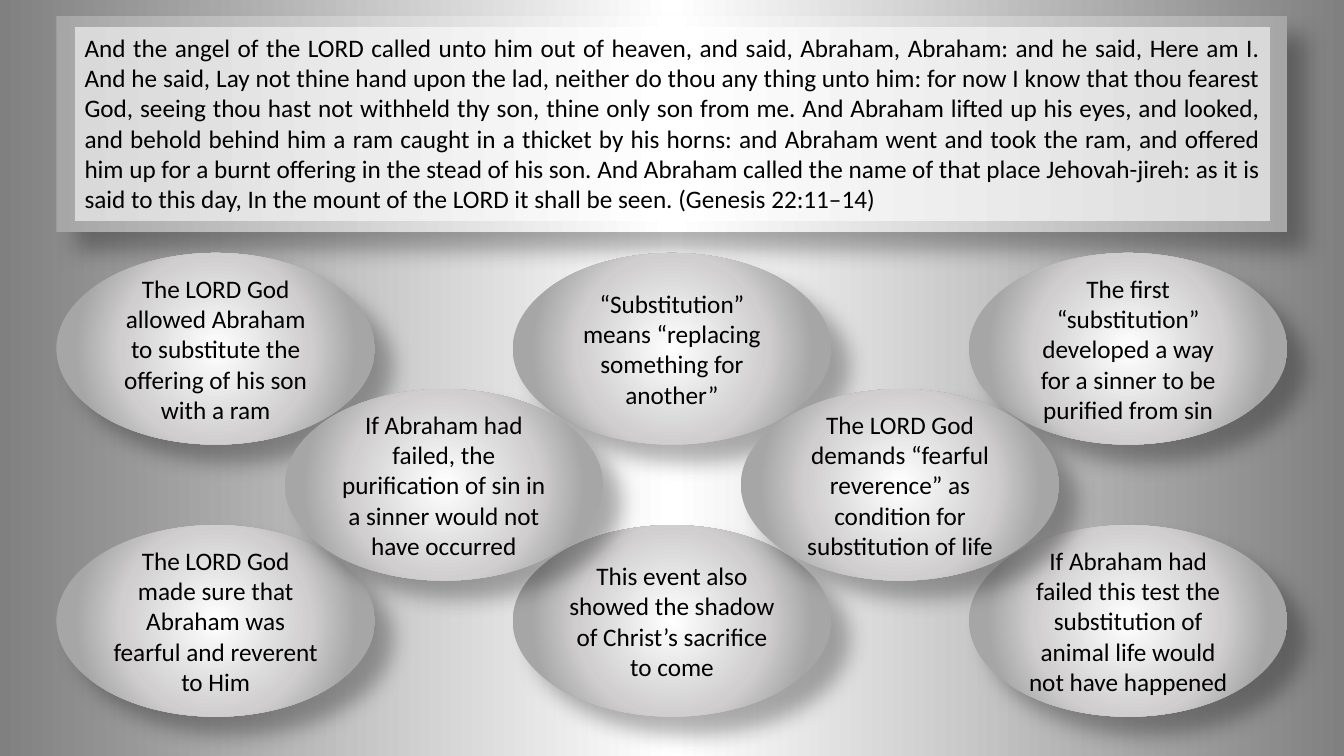
from lxml import etree
from pptx import Presentation
from pptx.dml.color import RGBColor
from pptx.enum.shapes import MSO_SHAPE
from pptx.enum.text import MSO_ANCHOR, MSO_AUTO_SIZE, PP_ALIGN
from pptx.oxml.ns import qn
from pptx.util import Inches, Pt

RECTANGLE, OVAL = MSO_SHAPE.RECTANGLE, MSO_SHAPE.OVAL
TOP, MIDDLE = MSO_ANCHOR.TOP, MSO_ANCHOR.MIDDLE
CENTER, JUSTIFY = PP_ALIGN.CENTER, PP_ALIGN.JUSTIFY
GROW = MSO_AUTO_SIZE.SHAPE_TO_FIT_TEXT

BACKDROP = [(0, "808080"), (50, "FFFFFF"), (100, "808080")]
FRAME = [(0, "A6A6A6"), (50, "FFFFFF"), (100, "A6A6A6")]
PANEL = [(0, "D9D9D9"), (50, "FFFFFF"), (100, "D9D9D9")]
BUBBLE = [(0, "FFFFFF"), (51, "D0CECE"), (76, "A6A6A6")]

VERSE = (
    "And the angel of the LORD called unto him out of heaven, and said, Abraham, "
    "Abraham: and he said, Here am I. And he said, Lay not thine hand upon the lad, "
    "neither do thou any thing unto him: for now I know that thou fearest God, seeing "
    "thou hast not withheld thy son, thine only son from me. And Abraham lifted up his "
    "eyes, and looked, and behold behind him a ram caught in a thicket by his horns: "
    "and Abraham went and took the ram, and offered him up for a burnt offering in the "
    "stead of his son. And Abraham called the name of that place Jehovah-jireh: as it "
    "is said to this day, In the mount of the LORD it shall be seen. (Genesis 22:11–14)"
)

# Column, row and wording of each bubble, from back to front
POINTS = [
    (0, 0, "The LORD God allowed Abraham to substitute the offering of his son with a ram"),
    (2, 0, "“Substitution” means “replacing something for another”"),
    (4, 0, "The first “substitution” developed a way for a sinner to be purified from sin"),
    (0, 2, "The LORD God made sure that Abraham was fearful and reverent to Him"),
    (2, 2, "This event also showed the shadow of Christ’s sacrifice to come"),
    (4, 2, "If Abraham had failed this test the substitution of animal life would not have happened"),
    (3, 1, "The LORD God demands “fearful reverence” as condition for substitution of life"),
    (1, 1, "If Abraham had failed, the purification of sin in a sinner would not have occurred"),
]
LEFT, COLUMN_STEP = 0.56, 9.05 / 4
UPPER, ROW_STEP = 2.51, 1.35


def color(value):
    return RGBColor.from_string(value)


def add_node(parent, tag, **attributes):
    node = etree.SubElement(parent, qn(tag))
    for name, value in attributes.items():
        node.set(name, str(value))
    return node


class Page:
    font, size, ink = "Calibri", 18, "000000"

    def __init__(self, slide):
        self.slide = slide

    def gradient(self, owner, fill, stops, radial=False):
        fill.gradient()
        node = owner.element.find(".//" + qn("a:gradFill"))
        for child in list(node):
            node.remove(child)
        stop_list = add_node(node, "a:gsLst")
        for position, value in stops:
            stop = add_node(stop_list, "a:gs", pos=position * 1000)
            add_node(stop, "a:srgbClr", val=value)
        if radial:
            shade = add_node(node, "a:path", path="circle")
            add_node(shade, "a:fillToRect", l=50000, t=50000, r=50000, b=50000)
        else:
            add_node(node, "a:lin", ang=0, scaled=0)

    def background(self, stops):
        self.gradient(self.slide, self.slide.background.fill, stops)

    def shape(self, kind, left, top, width, height, stops, shadow=True):
        box = self.slide.shapes.add_shape(
            kind, Inches(left), Inches(top), Inches(width), Inches(height))
        self.gradient(box, box.fill, stops, radial=kind == OVAL)
        box.line.fill.background()
        box.shadow.inherit = False
        if shadow:
            effects = box.element.spPr.find(qn("a:effectLst"))
            outer = add_node(effects, "a:outerShdw", blurRad=Pt(15), dist=Pt(18),
                             dir=45 * 60000, algn="tl", rotWithShape=0)
            tint = add_node(outer, "a:srgbClr", val="000000")
            add_node(tint, "a:alpha", val=30000)
        return box

    def text(self, box, wording, align, anchor):
        frame = box.text_frame
        frame.word_wrap = True
        frame.vertical_anchor = anchor
        para = frame.paragraphs[0]
        para.alignment = align
        span = para.add_run()
        span.text = wording
        span.font.name = self.font
        span.font.size = Pt(self.size)
        span.font.color.rgb = color(self.ink)


def main():
    deck = Presentation()
    deck.slide_width, deck.slide_height = Inches(13.33), Inches(7.5)
    page = Page(deck.slides.add_slide(deck.slide_layouts[6]))
    page.background(BACKDROP)

    # Framed verse
    page.shape(RECTANGLE, LEFT, 0.16, 12.21, 2.14, FRAME)
    panel = page.shape(RECTANGLE, 0.74, 0.27, 11.86, 1.92, PANEL, shadow=False)
    page.text(panel, VERSE, JUSTIFY, TOP)
    panel.text_frame.auto_size = GROW

    # Bubbles on a staggered grid
    for column, row, wording in POINTS:
        bubble = page.shape(OVAL, LEFT + column * COLUMN_STEP, UPPER + row * ROW_STEP,
                            3.16, 1.9, BUBBLE)
        page.text(bubble, wording, CENTER, MIDDLE)

    deck.save("out.pptx")


if __name__ == "__main__":
    main()
